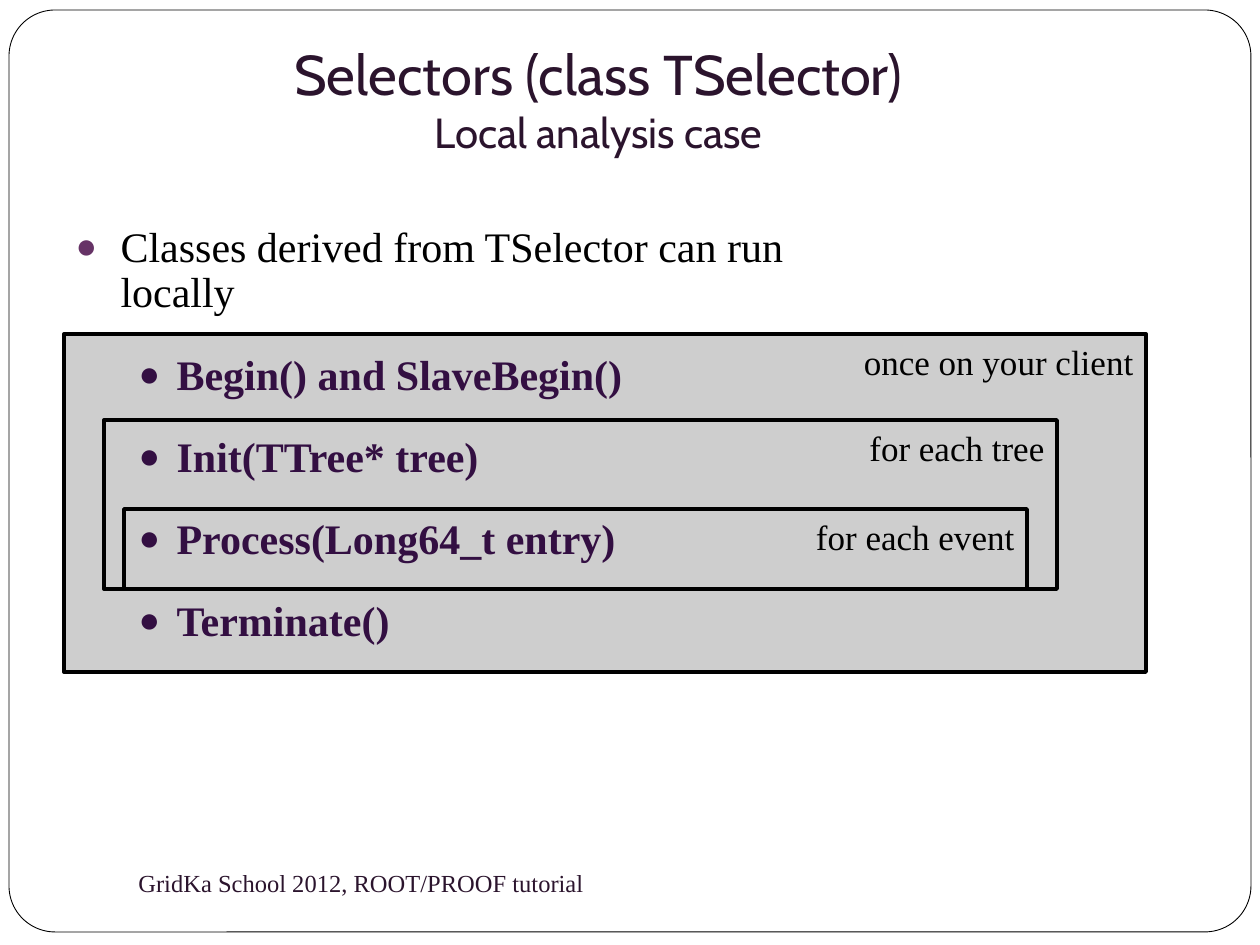
from lxml import etree
from pptx import Presentation, util as u
from pptx.dml.color import RGBColor
from pptx.enum import shapes, text
from pptx.oxml.ns import qn

PX = 914400 // 126  # 126 px to the inch
SERIF = "Times New Roman"
INK, PLUM, VIOLET = "000000", "2B142D", "330F42"


def rgb(value):
    return RGBColor.from_string(value)


def add_run(p, words, size, color, font=SERIF, bold=False):
    r = p.add_run()
    r.text = words
    r.font.size, r.font.name, r.font.bold = u.Pt(size), font, bold
    r.font.color.rgb = rgb(color)


prs = Presentation()
prs.slide_width, prs.slide_height = u.Inches(10), u.Inches(7.5)
s = prs.slides.add_slide(prs.slide_layouts[1])
title, body = s.placeholders[0], s.placeholders[1]

# Page frame and nested call boxes: kind, left, top, width, height, fill, line, label
boxes = [
    ("ROUNDED_RECTANGLE", 9, 10, 1242, 922, "FFFFFF", 0.5, ""),
    ("RECTANGLE", 64, 334, 1082, 338, "CECECE", 2.25, "once on your client"),
    ("RECTANGLE", 104, 420, 953, 169, "CECECE", 2.25, "for each tree"),
    ("RECTANGLE", 124, 509, 903, 80, "CECECE", 2.25, "for each event"),
]
for kind, x, y, w, h, fill, line, label in boxes:
    sp = s.shapes.add_shape(shapes.MSO_SHAPE[kind], x * PX, y * PX, w * PX, h * PX)
    sp.shadow.inherit = False
    sp.fill.solid()
    sp.fill.fore_color.rgb = rgb(fill)
    sp.line.color.rgb = rgb(INK)
    sp.line.width = u.Pt(line)
    if kind == "ROUNDED_RECTANGLE":
        sp.adjustments[0] = 0.05
    if label:
        tf = sp.text_frame
        tf.word_wrap = True
        tf.vertical_anchor = text.MSO_ANCHOR.TOP
        p = tf.paragraphs[0]
        p.alignment = text.PP_ALIGN.RIGHT
        add_run(p, label, 20, INK)

# Placeholders go in front of the boxes
for sp in (title, body):
    s.shapes._spTree.append(sp._element)

# Title
title.left, title.top, title.width, title.height = 63 * PX, 38 * PX, 1071 * PX, 132 * PX
tf = title.text_frame
tf.auto_size = text.MSO_AUTO_SIZE.NONE
tf.vertical_anchor = text.MSO_ANCHOR.BOTTOM
tf.margin_bottom = u.Inches(0.1)
p = tf.paragraphs[0]
p.alignment = text.PP_ALIGN.CENTER
add_run(p, "Selectors (class TSelector)", 32, PLUM, "Cabin")
p.add_line_break()
add_run(p, "Local analysis case", 24, PLUM, "Cabin")

# Bulleted list
body.left, body.top, body.width, body.height = 63 * PX, 220 * PX, 756 * PX, 624 * PX
tf = body.text_frame
tf.auto_size = text.MSO_AUTO_SIZE.NONE
items = [
    "Classes derived from TSelector can run locally",
    "Begin() and SlaveBegin()",
    "Init(TTree* tree)",
    "Process(Long64_t entry)",
    "Terminate()",
]
for i, words in enumerate(items):
    p = tf.add_paragraph() if i else tf.paragraphs[0]
    p.level = 1 if i else 0
    p.line_spacing = 1.5 if i else 0.9
    p.space_before = u.Pt(3.7 if i else 5.8)
    margin, indent = (101, -38) if i else (45, -45)
    pPr = p._p.get_or_add_pPr()
    pPr.set("marL", str(margin * PX))
    pPr.set("indent", str(indent * PX))
    clr = etree.SubElement(pPr, qn("a:buClr"))
    etree.SubElement(clr, qn("a:srgbClr"), val=VIOLET if i else "663366")
    etree.SubElement(pPr, qn("a:buSzPct"), val="85000")
    etree.SubElement(pPr, qn("a:buChar"), char="●")
    add_run(p, words, 24, VIOLET if i else INK, bold=i > 0)

# Footer
tf = s.shapes.add_textbox(126 * PX, 851 * PX, 546 * PX, 63 * PX).text_frame
tf.word_wrap = True
tf.vertical_anchor = text.MSO_ANCHOR.MIDDLE
add_run(tf.paragraphs[0], "GridKa School 2012, ROOT/PROOF tutorial", 14, PLUM)

prs.save("out.pptx")
